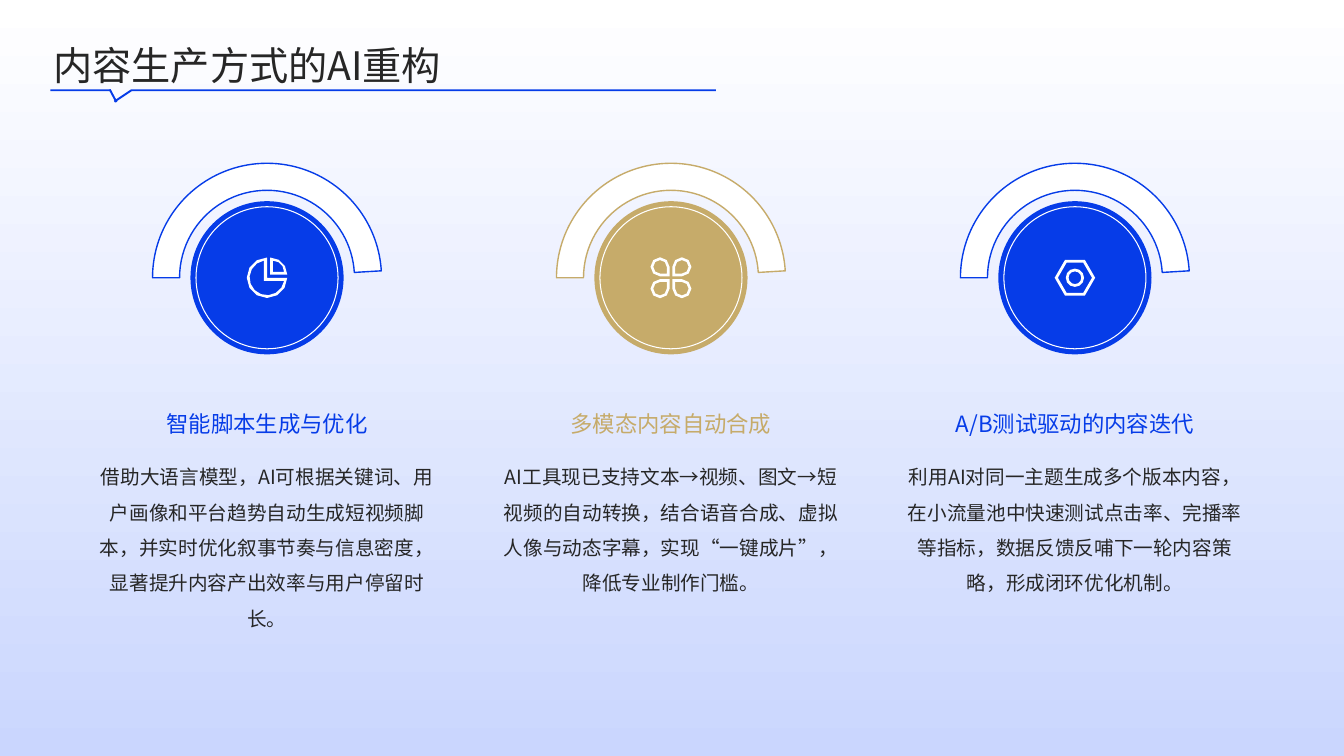
from math import cos, hypot, radians, sin

from lxml import etree
from pptx import Presentation
from pptx import util as u
from pptx.dml.color import RGBColor
from pptx.enum import shapes, text
from pptx.oxml import ns

BLUE = RGBColor(0x06, 0x3C, 0xE8)
GOLD = RGBColor(0xC6, 0xAB, 0x6A)
WHITE = RGBColor(0xFF, 0xFF, 0xFF)
PALE_BLUE = RGBColor(0xCA, 0xD6, 0xFE)
DARK = RGBColor(0x26, 0x26, 0x26)
FONT = "Noto Sans CJK SC"

FIRST_CENTER, COLUMN_STEP = 6.73, 10.18
DIAL_CENTER = 7.0
TEXT_WIDTH = 8.79


def arc(center_x, center_y, radius, start, end, step=30):
    return [
        (center_x + radius * cos(radians(angle)), center_y + radius * sin(radians(angle)))
        for angle in range(start, end + 1, step)
    ]


def petal(center_x, center_y, radius, turn):
    corner = arc(center_x, center_y, radius * hypot(1, 1), 225 + turn, 225 + turn)
    return arc(center_x, center_y, radius, 270 + turn, 540 + turn, 45) + corner


def pie_outlines():
    return [
        [(0, 0)] + arc(0, 0, 0.51, 0, 270),
        [(-0.08, 0.08)] + arc(0, 0, 0.44, 10, 260, 25),
        [(0.08, -0.08)] + arc(0.08, -0.08, 0.43, 270, 360),
        [(0.15, -0.15)] + arc(0.15, -0.15, 0.28, 270, 360),
    ]


def clover_outlines():
    outlines = []
    for turn in range(0, 360, 90):
        (center_x, center_y), = arc(0, 0, 0.39, 45 + turn, 45 + turn)
        outlines += [petal(center_x, center_y, radius, turn) for radius in (0.24, 0.17)]
    return outlines


def hexagon(tip, corner_x, corner_y):
    return [(-tip, 0), (-corner_x, -corner_y), (corner_x, -corner_y),
            (tip, 0), (corner_x, corner_y), (-corner_x, corner_y)]


def nut_outlines():
    return [
        hexagon(0.51, 0.25, 0.45),
        hexagon(0.43, 0.21, 0.38),
        arc(0, 0, 0.23, 0, 330),
        arc(0, 0, 0.16, 0, 330),
    ]


COLUMNS = [
    (BLUE, pie_outlines, "智能脚本生成与优化",
     "借助大语言模型，AI可根据关键词、用户画像和平台趋势自动生成短视频脚本，并实时优化叙事节奏与信息密度，显著提升内容产出效率与用户停留时长。"),
    (GOLD, clover_outlines, "多模态内容自动合成",
     "AI工具现已支持文本→视频、图文→短视频的自动转换，结合语音合成、虚拟人像与动态字幕，实现“一键成片”，降低专业制作门槛。"),
    (BLUE, nut_outlines, "A/B测试驱动的内容迭代",
     "利用AI对同一主题生成多个版本内容，在小流量池中快速测试点击率、完播率等指标，数据反馈反哺下一轮内容策略，形成闭环优化机制。"),
]

UNDERLINE_BARS = [
    (1.27, 2.25, 1.5, 0),
    (3.33, 2.25, 14.71, 0),
    (2.67, 2.39, 0.36, 61.9),
    (2.84, 2.39, 0.53, 326.5),
]


def paint(shape, fill, line=None, line_width=1):
    shape.shadow.inherit = False
    shape.fill.solid()
    shape.fill.fore_color.rgb = fill
    if line is None:
        shape.line.fill.background()
    else:
        shape.line.color.rgb = line
        shape.line.width = u.Pt(line_width)


def add_background(slide, width, height):
    background = slide.shapes.add_shape(shapes.MSO_SHAPE.RECTANGLE, 0, 0, width, height)
    background.shadow.inherit = False
    background.line.fill.background()
    background.fill.gradient()
    background.fill.gradient_angle = 270
    for stop, color, position in zip(background.fill.gradient_stops, (WHITE, PALE_BLUE), (0, 1)):
        stop.color.rgb = color
        stop.position = position


def write(shape, content, size, color, spacing, alignment, anchor):
    frame = shape.text_frame
    frame.text = content
    frame.word_wrap = True
    frame.auto_size = text.MSO_AUTO_SIZE.NONE
    frame.vertical_anchor = anchor
    frame.margin_left = frame.margin_right = frame.margin_top = frame.margin_bottom = 0
    paragraph = frame.paragraphs[0]
    paragraph.alignment = alignment
    paragraph.line_spacing = spacing
    paragraph.space_before = u.Pt(0)
    paragraph._p.get_or_add_pPr().set("hangingPunct", "0")
    for run in paragraph.runs:
        run.font.size = u.Pt(size)
        run.font.color.rgb = color
        run.font.name = FONT
        properties = run.font._element
        etree.SubElement(properties, ns.qn("a:ea"), typeface=FONT)


def place_title(slide, content):
    title = slide.shapes.title
    title.left, title.top, title.width, title.height = map(u.Cm, (1.35, 0.69, 28.83, 1.5))
    write(title, content, 28, DARK, 1.3, text.PP_ALIGN.LEFT, text.MSO_ANCHOR.TOP)


def add_underline(slide):
    group = slide.shapes.add_group_shape()
    for left, top, width, rotation in UNDERLINE_BARS:
        bar = group.shapes.add_shape(
            shapes.MSO_SHAPE.RECTANGLE, u.Cm(left), u.Cm(top), u.Cm(width), u.Cm(0.05))
        bar.rotation = rotation
        paint(bar, BLUE)


def add_round(slide, kind, center, diameter):
    return slide.shapes.add_shape(
        kind, u.Cm(center - diameter / 2), u.Cm(DIAL_CENTER - diameter / 2),
        u.Cm(diameter), u.Cm(diameter))


def add_icon(slide, center, outlines):
    builder = None
    for outline in outlines:
        points = [(u.Cm(x), u.Cm(y)) for x, y in outline]
        if builder is None:
            builder = slide.shapes.build_freeform(*points[0])
        else:
            builder.move_to(*points[0])
        builder.add_line_segments(points[1:], close=True)
    paint(builder.convert_to_shape(u.Cm(center), u.Cm(DIAL_CENTER)), WHITE)


def add_dial(slide, center, color, outlines):
    band = add_round(slide, shapes.MSO_SHAPE.BLOCK_ARC, center, 5.77)
    for index, value in enumerate((108, 213.914, 0.118)):
        band.adjustments[index] = value
    paint(band, WHITE, color)
    circle = shapes.MSO_SHAPE.FLOWCHART_CONNECTOR
    paint(add_round(slide, circle, center, 3.86), color)
    paint(add_round(slide, circle, center, 3.58), color, WHITE, 0.75)
    add_icon(slide, center, outlines)


def add_text(slide, center, top, height, content, size, color, spacing, anchor):
    box = slide.shapes.add_textbox(
        u.Cm(center - TEXT_WIDTH / 2), u.Cm(top), u.Cm(TEXT_WIDTH), u.Cm(height))
    write(box, content, size, color, spacing, text.PP_ALIGN.CENTER, anchor)


def main():
    presentation = Presentation()
    presentation.slide_width = u.Cm(33.87)
    presentation.slide_height = u.Cm(19.05)
    slide = presentation.slides.add_slide(presentation.slide_layouts[5])
    add_background(slide, presentation.slide_width, presentation.slide_height)
    title_element = slide.shapes.title._element
    slide.shapes._spTree.append(title_element)
    place_title(slide, "内容生产方式的AI重构")
    add_underline(slide)
    for index, (color, outlines, heading, body) in enumerate(COLUMNS):
        center = FIRST_CENTER + index * COLUMN_STEP
        add_dial(slide, center, color, outlines())
        add_text(slide, center, 8.9, 2.11, heading, 16, color, 1.3, text.MSO_ANCHOR.BOTTOM)
        add_text(slide, center, 11.43, 4.19, body, 14, DARK, 1.5, text.MSO_ANCHOR.TOP)
    presentation.save("out.pptx")


if __name__ == "__main__":
    main()
